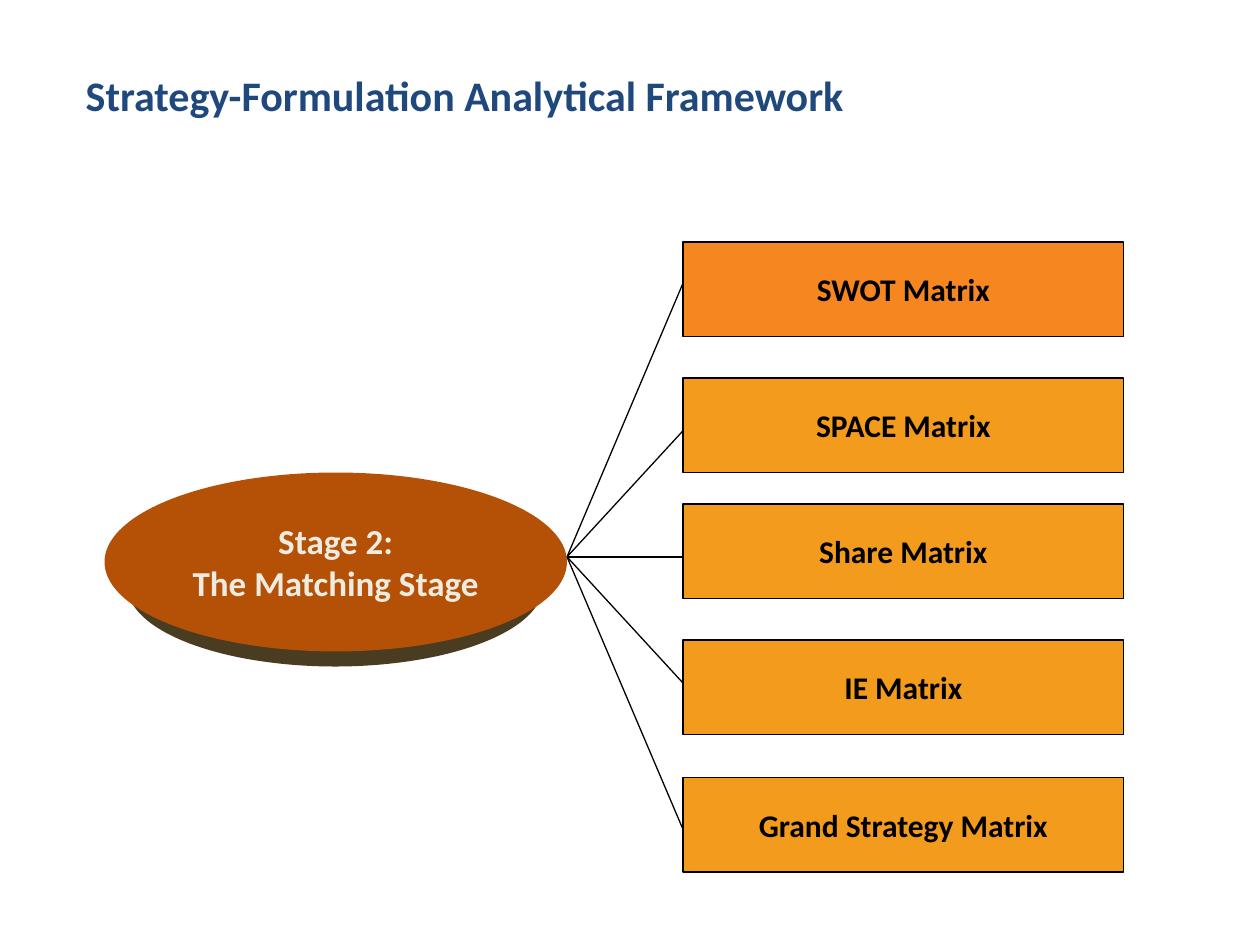
from dataclasses import dataclass

from lxml import etree
from pptx import Presentation
from pptx import util as u
from pptx.dml.color import RGBColor
from pptx.enum import shapes, text
from pptx.oxml import ns
from pptx.shapes.autoshape import Shape
from pptx.slide import Slide

COLORS = {
    "title": "1F497D",
    "highlight": "F6861F",
    "matrix": "F39B1C",
    "stage": "B45106",
    "stage_edge": "4A3C20",
    "stage_text": "EEECE1",
    "ink": "000000",
}
FONT = "Calibri"
HUB_X, HUB_Y = 4.5, 4.42
BOX_LEFT, BOX_WIDTH, BOX_HEIGHT = 5.42, 3.5, 0.75
LINE_WIDTH = u.Pt(0.75)


@dataclass
class Matrix:
    label: str
    top: float
    line_end: float
    fill: str = "matrix"


MATRICES = [
    Matrix("SWOT Matrix", 1.92, 2.25, "highlight"),
    Matrix("SPACE Matrix", 3, 3.42),
    Matrix("Share Matrix", 4, 4.42),
    Matrix("IE Matrix", 5.08, 5.42),
    Matrix("Grand Strategy Matrix", 6.17, 6.58),
]


def rgb(name: str) -> RGBColor:
    return RGBColor.from_string(COLORS[name])


def write(shape: Shape, words: str, size: int, color: str,
          align: text.PP_ALIGN, wrap: bool = False) -> None:
    frame = shape.text_frame
    frame.text = words
    frame.word_wrap = wrap
    frame.vertical_anchor = text.MSO_ANCHOR.MIDDLE
    for para in frame.paragraphs:
        para.alignment = align
        for span in para.runs:
            span.font.name = FONT
            span.font.size = u.Pt(size)
            span.font.bold = True
            span.font.color.rgb = rgb(color)


def add_filled(page: Slide, kind: shapes.MSO_SHAPE, left: float, top: float,
               width: float, height: float, fill: str) -> Shape:
    shape = page.shapes.add_shape(kind, u.Inches(left), u.Inches(top),
                                  u.Inches(width), u.Inches(height))
    shape.shadow.inherit = False
    shape.fill.solid()
    shape.fill.fore_color.rgb = rgb(fill)
    shape.line.fill.background()
    return shape


def add_matrix(page: Slide, matrix: Matrix) -> None:
    box = add_filled(page, shapes.MSO_SHAPE.RECTANGLE, BOX_LEFT, matrix.top,
                     BOX_WIDTH, BOX_HEIGHT, matrix.fill)
    box.line.color.rgb = rgb("ink")
    box.line.width = LINE_WIDTH
    write(box, matrix.label, 18, "ink", text.PP_ALIGN.CENTER)


def add_branch(page: Slide, matrix: Matrix) -> None:
    branch = page.shapes.add_connector(
        shapes.MSO_CONNECTOR.STRAIGHT, u.Inches(HUB_X), u.Inches(HUB_Y),
        u.Inches(BOX_LEFT), u.Inches(matrix.line_end))
    branch.line.color.rgb = rgb("ink")
    branch.line.width = LINE_WIDTH
    etree.SubElement(branch._element.spPr, ns.qn("a:effectLst"))


def add_stage(page: Slide) -> None:
    oval = shapes.MSO_SHAPE.OVAL
    add_filled(page, oval, 1.01, 4.01, 3.3, 1.28, "stage_edge")
    stage = add_filled(page, oval, 0.83, 3.75, 3.67, 1.42, "stage")
    write(stage, "Stage 2:\vThe Matching Stage", 20, "stage_text",
          text.PP_ALIGN.CENTER)


def add_title(page: Slide) -> None:
    title = page.shapes.title
    title.left, title.top = u.Inches(0.58), u.Inches(0.5)
    title.width, title.height = u.Inches(9.75), u.Inches(0.51)
    write(title, "Strategy-Formulation Analytical Framework", 24, "title",
          text.PP_ALIGN.LEFT, wrap=True)


def main() -> None:
    deck = Presentation()
    deck.slide_width, deck.slide_height = u.Inches(10), u.Inches(7.5)
    page = deck.slides.add_slide(deck.slide_layouts.get_by_name("Title Only"))
    add_title(page)
    for matrix in MATRICES:
        add_matrix(page, matrix)
        add_branch(page, matrix)
    add_stage(page)
    deck.save("out.pptx")


if __name__ == "__main__":
    main()
